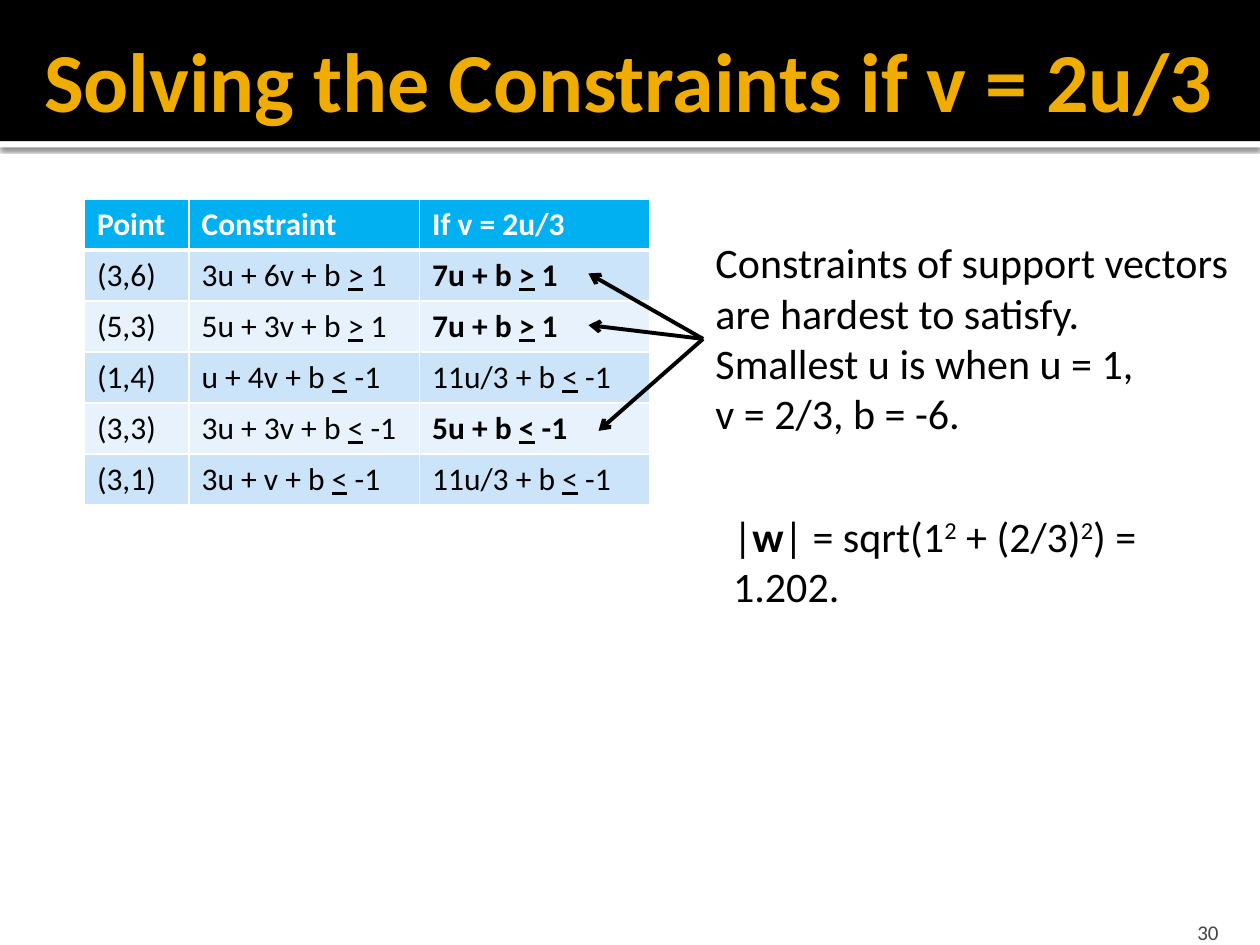
from lxml.etree import SubElement
from pptx import Presentation
from pptx.dml.color import RGBColor
from pptx.enum.shapes import MSO_CONNECTOR, MSO_SHAPE
from pptx.enum.text import MSO_ANCHOR, PP_ALIGN
from pptx.oxml import parse_xml
from pptx.oxml.ns import nsdecls, qn
from pptx.util import Inches, Pt

BLACK, WHITE, GOLD, GREY = "000000", "FFFFFF", "F0AD00", "454545"
HEADER, BANDS = "00B0F0", ("CCE4F9", "E7F2FC")

COLUMNS = ("Point", "Constraint", "If v = 2u/3")
# point, constraint, constraint after substitution, is a support vector
ROWS = (
    ("(3,6)", "3u + 6v + b > 1", "7u + b > 1", True),
    ("(5,3)", "5u + 3v + b > 1", "7u + b > 1", True),
    ("(1,4)", "u + 4v + b < -1", "11u/3 + b < -1", False),
    ("(3,3)", "3u + 3v + b < -1", "5u + b < -1", True),
    ("(3,1)", "3u + v + b < -1", "11u/3 + b < -1", False),
)


def rgb(color):
    return RGBColor.from_string(color)


def box(*lengths):
    return [Inches(v) for v in lengths]


def add_run(p, text, size, color=BLACK, raised=False, **format_values):
    r = p.add_run()
    r.text = text
    r.font.color.rgb = rgb(color)
    for name, value in {"name": "Calibri", "size": Pt(size), **format_values}.items():
        setattr(r.font, name, value)
    if raised:
        r._r.get_or_add_rPr().set("baseline", "30000")


def format_frame(tf, anchor, insets):
    tf.word_wrap = True
    tf.vertical_anchor = anchor
    for side, inset in zip(("left", "top", "right", "bottom"), insets):
        setattr(tf, f"margin_{side}", Inches(inset))


def add_text(shapes, bounds):
    tf = shapes.add_textbox(*box(*bounds)).text_frame
    format_frame(tf, MSO_ANCHOR.TOP, (0.1, 0.05, 0.1, 0.05))
    return tf


def add_bar(s, bounds, color):
    bar = s.shapes.add_shape(MSO_SHAPE.RECTANGLE, *box(*bounds))
    bar.fill.solid()
    bar.fill.fore_color.rgb = rgb(color)
    bar.line.fill.background()
    bar.shadow.inherit = False
    return bar


def add_header(s, left, top, width, height):
    strip = add_bar(s, (left, top + height, width, 0.05), WHITE)
    strip._element.spPr.find(qn("a:effectLst")).append(parse_xml(
        f'<a:outerShdw {nsdecls("a")} blurRad="{Pt(2.5)}" dist="{Pt(0.8)}" dir="5400000">'
        f'<a:srgbClr val="{BLACK}"><a:alpha val="60000"/></a:srgbClr></a:outerShdw>'))
    add_bar(s, (left, top, width, height), BLACK)

    title = s.shapes.title
    s.shapes._spTree.append(title._element)  # in front of the bars
    title.left, title.top, title.width, title.height = box(
        left + 0.25, top + 0.17, width - 0.25, 0.92)
    format_frame(title.text_frame, MSO_ANCHOR.MIDDLE, (0.1, 0.05, 0.05, 0.05))
    p = title.text_frame.paragraphs[0]
    p.alignment = PP_ALIGN.LEFT
    add_run(p, "Solving the Constraints if v = 2u/3", 48, GOLD, bold=True)


def add_page_number(s, bounds):
    tf = add_text(s.shapes, bounds)
    format_frame(tf, MSO_ANCHOR.BOTTOM, (0.1, 0.05, 0.1, 0))
    tf.paragraphs[0].alignment = PP_ALIGN.RIGHT
    add_run(tf.paragraphs[0], "30", 12, GREY)


def style_cell(cell, fill, bottom_width):
    tcPr = cell._tc.get_or_add_tcPr()
    for side in "LRTB":
        width = bottom_width if side == "B" else 1
        tcPr.append(parse_xml(
            f'<a:ln{side} {nsdecls("a")} w="{Pt(width)}"><a:solidFill>'
            f'<a:srgbClr val="{WHITE}"/></a:solidFill></a:ln{side}>'))
    cell.fill.solid()
    cell.fill.fore_color.rgb = rgb(fill)


def add_constraint(p, text, bold):
    """Write the text with its comparison sign underlined."""
    sign = next((c for c in "<>" if c in text), None)
    before, sign, after = text.partition(sign) if sign else (text, "", "")
    for part, underline in ((before, False), (sign, True), (after, False)):
        if part:
            add_run(p, part, 18, bold=bold, underline=underline)


def add_constraint_table(s, left, top, width, height):
    table = s.shapes.add_table(len(ROWS) + 1, len(COLUMNS),
                               *box(left, top, width, height)).table
    for column, share in zip(table.columns, (0.83, 1.83, 1.83)):
        column.width = Inches(share)
    for row in table.rows:
        row.height = Inches(height / len(table.rows))
    for j, heading in enumerate(COLUMNS):
        cell = table.cell(0, j)
        style_cell(cell, HEADER, 3)
        add_run(cell.text_frame.paragraphs[0], heading, 18, WHITE, bold=True)
    for i, (*texts, is_support) in enumerate(ROWS):
        for j, text in enumerate(texts):
            cell = table.cell(i + 1, j)
            style_cell(cell, BANDS[i % 2], 1)
            add_constraint(cell.text_frame.paragraphs[0], text, is_support and j == 2)


def add_arrow(shapes, start, end):
    arrow = shapes.add_connector(MSO_CONNECTOR.STRAIGHT, *box(*start, *end))
    arrow.line.color.rgb = rgb(BLACK)
    arrow.line.width = Pt(2.25)
    SubElement(arrow.line._get_or_add_ln(), qn("a:tailEnd"), type="arrow")
    SubElement(arrow._element.spPr, qn("a:effectLst"))


def add_support_note(s, left, top, width, height):
    """Add the remark with arrows to the support vector rows."""
    shapes = s.shapes.add_group_shape().shapes
    tf = add_text(shapes, (left, top, width, height))
    lines = ("Constraints of support vectors", "are hardest to satisfy.",
             "Smallest u is when u = 1,", "v = 2/3, b = -6.")
    for i, line in enumerate(lines):
        add_run(tf.add_paragraph() if i else tf.paragraphs[0], line, 24)
    for end in ((4.67, 2.17), (4.67, 2.58), (4.75, 3.42)):
        add_arrow(shapes, (left, top + height / 2), end)


def add_norm(s, bounds):
    p = add_text(s.shapes, bounds).paragraphs[0]
    for text, style in (("|", {}), ("w", {"bold": True}), ("| = sqrt(1", {}),
                        ("2", {"raised": True}), (" + (2/3)", {}),
                        ("2", {"raised": True}), (") = 1.202.", {})):
        add_run(p, text, 24, **style)


def main():
    prs = Presentation()
    prs.slide_width, prs.slide_height = box(10, 7.5)
    s = prs.slides.add_slide(prs.slide_layouts[5])
    add_header(s, 0, 0, 10, 1.12)
    add_page_number(s, (8.97, 7.2, 0.8, 0.3))
    add_constraint_table(s, 0.67, 1.58, 4.5, 2.43)
    add_support_note(s, 5.58, 1.83, 4.38, 1.72)
    add_norm(s, (5.72, 4, 4.21, 0.5))
    prs.save("out.pptx")


if __name__ == "__main__":
    main()
